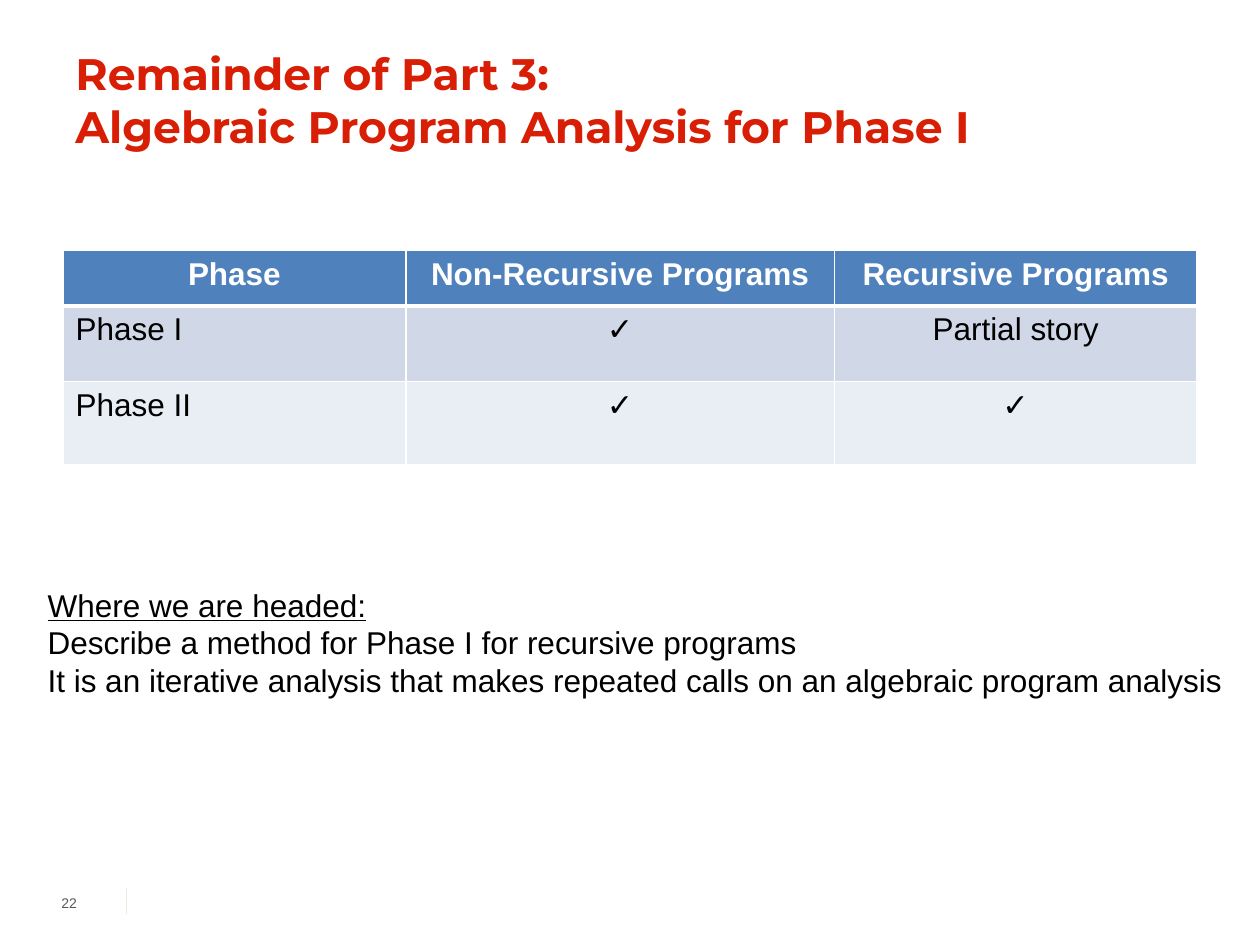
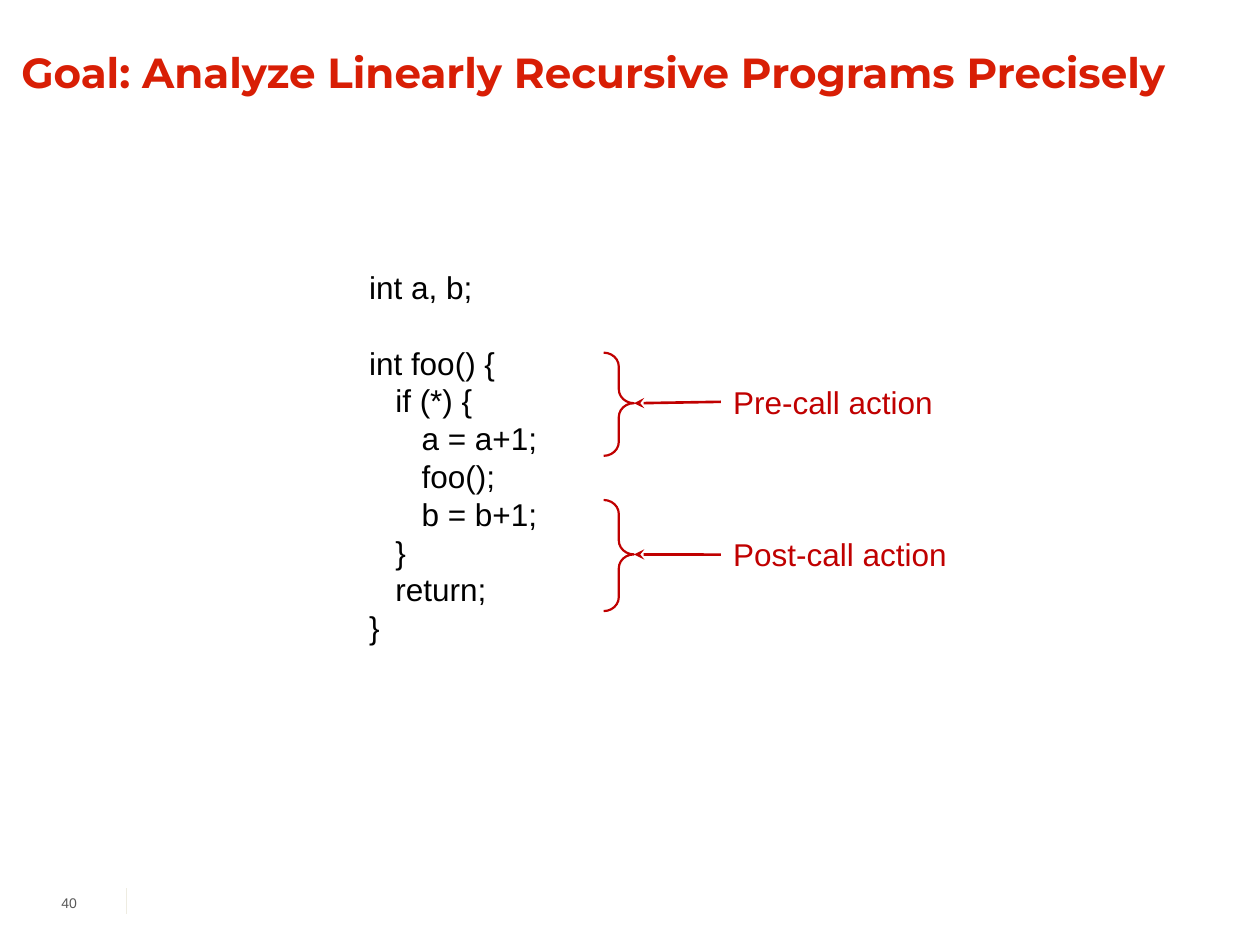
import pptx
import pptx.dml.color
import pptx.enum.shapes
import pptx.enum.text
import pptx.oxml
import pptx.oxml.ns
import pptx.util
from pptx.util import Cm

RED, DARK_RED, BLACK, WHITE = "D81E05", "C00000", "000000", "FFFFFF"
GREY, PALE_GREY = "595959", "EEECE1"
HEADER_BLUE, ROW_BLUE, ROW_PALE = "4F81BD", "D0D8E8", "E9EDF4"
BODY_SIZE = 18
LINE_PITCH = 21.6
CODE_INDENT = 0.53
ALIGN = pptx.enum.text.PP_ALIGN
ANCHOR = pptx.enum.text.MSO_ANCHOR
SHAPE = pptx.enum.shapes.MSO_SHAPE


def paint(color_format, color):
    color_format.rgb = pptx.dml.color.RGBColor.from_string(color)


def add_run(paragraph, text, size=BODY_SIZE, color=BLACK, name="Arial", bold=False, underline=False):
    run = paragraph.add_run()
    run.text = text
    run.font.size = pptx.util.Pt(size)
    run.font.name = name
    run.font.bold = bold
    run.font.underline = underline
    paint(run.font.color, color)


def add_box(slide, left, top, width, height, wrap=False):
    box = slide.shapes.add_textbox(Cm(left), Cm(top), Cm(width), Cm(height))
    box.text_frame.word_wrap = wrap
    return box


def add_lines(box, lines, color=BLACK):
    frame = box.text_frame
    for index, (text, level, gap, underline) in enumerate(lines):
        paragraph = frame.add_paragraph() if index else frame.paragraphs[0]
        paragraph.line_spacing = pptx.util.Pt(LINE_PITCH)
        paragraph.space_before = pptx.util.Pt(gap * LINE_PITCH)
        if level:
            paragraph._p.get_or_add_pPr().set("marL", str(Cm(level * CODE_INDENT)))
        add_run(paragraph, text, color=color, underline=underline)


def add_line(slide, start, end, color, width, arrow=False):
    points = [Cm(value) for value in (*start, *end)]
    line = slide.shapes.add_connector(pptx.enum.shapes.MSO_CONNECTOR.STRAIGHT, *points)
    paint(line.line.color, color)
    line.line.width = pptx.util.Pt(width)
    if arrow:
        tail = pptx.oxml.parse_xml(f'<a:tailEnd {pptx.oxml.ns.nsdecls("a")} type="stealth"/>')
        line.line._get_or_add_ln().append(tail)
    line._element.spPr.append(pptx.oxml.parse_xml(f'<a:effectLst {pptx.oxml.ns.nsdecls("a")}/>'))
    return line


def add_slide(presentation, title_lines, title_left, title_width, title_size, number):
    slide = presentation.slides.add_slide(presentation.slide_layouts[6])
    add_line(slide, (2.54, 17.91), (2.54, 18.42), PALE_GREY, 0.25)

    title = add_box(slide, title_left, 0.82, title_width, 2.41, wrap=True)
    paragraph = title.text_frame.paragraphs[0]
    for index, text in enumerate(title_lines):
        if index:
            paragraph.add_line_break()
        add_run(paragraph, text, title_size, RED, "Montserrat", bold=True)

    frame = add_box(slide, 0.84, 17.78, 0.84, 0.84, wrap=True).text_frame
    frame.margin_left = 0
    frame.margin_right = Cm(0.13)
    frame.vertical_anchor = ANCHOR.MIDDLE
    frame.paragraphs[0].alignment = ALIGN.RIGHT
    add_run(frame.paragraphs[0], number, 8, GREY)
    return slide


def add_cell_borders(cell, bottom_width):
    properties = cell._tc.get_or_add_tcPr()
    for side, width in (("L", 1), ("R", 1), ("T", 1), ("B", bottom_width)):
        properties.append(pptx.oxml.parse_xml(
            f'<a:ln{side} {pptx.oxml.ns.nsdecls("a")} w="{pptx.util.Pt(width)}">'
            f'<a:solidFill><a:srgbClr val="{WHITE}"/></a:solidFill></a:ln{side}>'))


def add_phase_table(slide, rows, column_widths, row_heights, fills):
    frame = slide.shapes.add_table(len(rows), len(column_widths), Cm(1.27), Cm(5.05),
                                   Cm(sum(column_widths)), Cm(sum(row_heights)))
    table = frame.table
    for column, width in zip(table.columns, column_widths):
        column.width = Cm(width)
    for row_index, texts in enumerate(rows):
        table.rows[row_index].height = Cm(row_heights[row_index])
        header = row_index == 0
        for column_index, text in enumerate(texts):
            cell = table.cell(row_index, column_index)
            add_cell_borders(cell, 3 if header else 1)
            cell.fill.solid()
            paint(cell.fill.fore_color, fills[row_index])
            paragraph = cell.text_frame.paragraphs[0]
            paragraph.alignment = ALIGN.CENTER if header or column_index else ALIGN.LEFT
            add_run(paragraph, text, color=WHITE if header else BLACK, bold=header)


def add_brace_label(slide, text, label_top, label_width, brace_top, brace_height):
    label = add_box(slide, 14.53, label_top, label_width, 1.02)
    add_lines(label, [(text, 0, 0, False)], DARK_RED)

    brace = slide.shapes.add_shape(SHAPE.RIGHT_BRACE, Cm(12.17), Cm(brace_top), Cm(0.61), Cm(brace_height))
    brace.adjustments[0], brace.adjustments[1] = 0.46, 0.49
    brace.shadow.inherit = False
    brace.fill.background()
    paint(brace.line.color, DARK_RED)
    brace.line.width = pptx.util.Pt(1.25)

    tip_y = brace_top + 0.49 * brace_height
    arrow = add_line(slide, (14.53, tip_y), (12.78, tip_y), DARK_RED, 1.5, arrow=True)
    arrow.begin_connect(label, 1)


def build_phase_slide(presentation):
    slide = add_slide(presentation,
                      ["Remainder of Part 3:", "Algebraic Program Analysis for Phase I"],
                      1.27, 22.86, 25.2, "22")
    rows = [
        ("Phase", "Non-Recursive Programs", "Recursive Programs"),
        ("Phase I", "✓", "Partial story"),
        ("Phase II", "✓", "✓"),
    ]
    add_phase_table(slide, rows, (6.91, 8.64, 7.31), (1.12, 1.52, 1.67),
                    (HEADER_BLUE, ROW_BLUE, ROW_PALE))
    add_lines(add_box(slide, 0.71, 11.68, 24.46, 2.57), [
        ("Where we are headed:", 0, 0, True),
        ("Describe a method for Phase I for recursive programs", 0, 0, False),
        ("It is an iterative analysis that makes repeated calls on an algebraic program analysis", 0, 0, False),
    ])


def build_goal_slide(presentation):
    slide = add_slide(presentation, ["Goal: Analyze Linearly Recursive Programs Precisely"],
                      0.18, 25.04, 24, "40")
    add_lines(add_box(slide, 7.19, 5.28, 3.94, 7.95), [
        ("int a, b;", 0, 0, False),
        ("int foo() {", 0, 1, False),
        ("if (*) {", 1, 0, False),
        ("a = a+1;", 2, 0, False),
        ("foo();", 2, 0, False),
        ("b = b+1;", 2, 0, False),
        ("}", 1, 0, False),
        ("return;", 1, 0, False),
        ("}", 0, 0, False),
    ])
    add_brace_label(slide, "Pre-call action", 7.59, 4.57, 7.11, 2.08)
    add_brace_label(slide, "Post-call action", 10.67, 4.85, 10.08, 2.24)


def main():
    presentation = pptx.Presentation()
    presentation.slide_width = Cm(25.4)
    presentation.slide_height = Cm(19.05)
    build_phase_slide(presentation)
    build_goal_slide(presentation)
    presentation.save("out.pptx")


if __name__ == "__main__":
    main()
